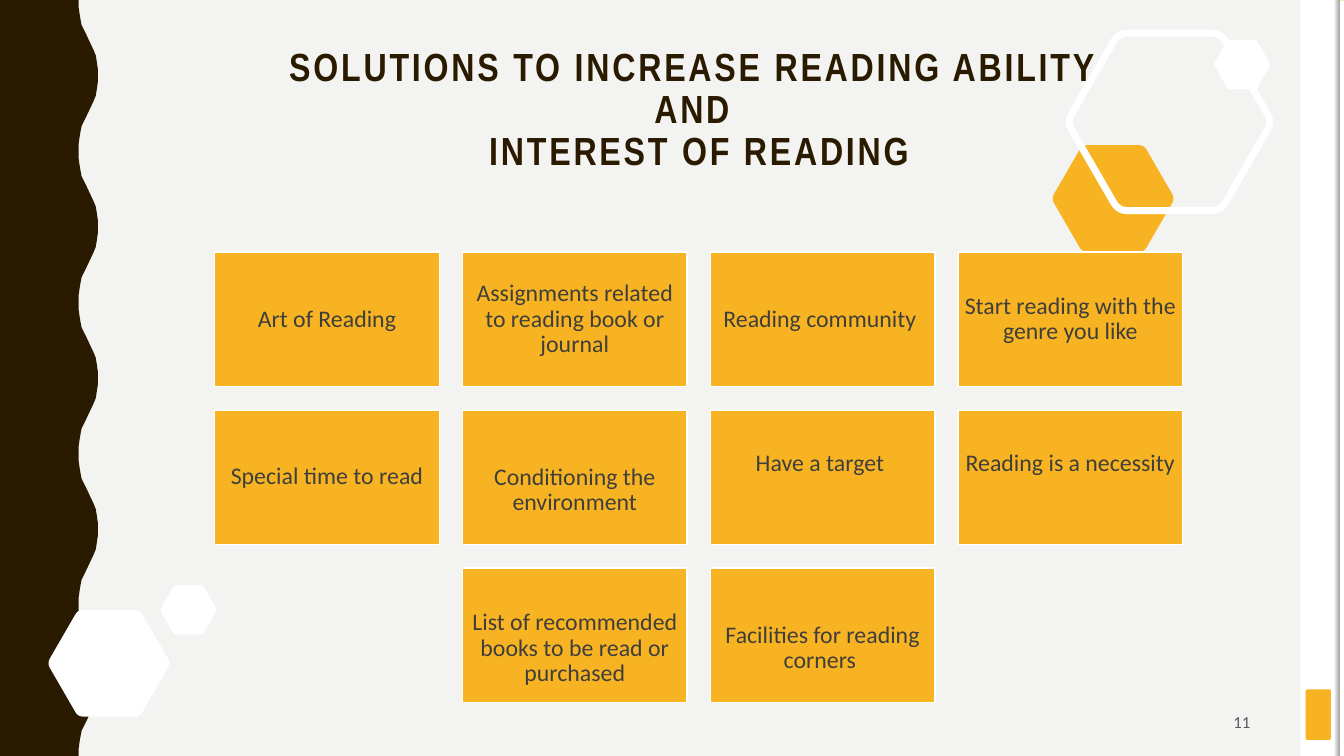
from math import cos, radians, sin, sqrt

from pptx import Presentation
from pptx.dml.color import RGBColor
from pptx.enum.shapes import MSO_SHAPE as Preset
from pptx.enum.text import MSO_ANCHOR as Anchor, PP_ALIGN as Align
from pptx.util import Inches, Pt

COLORS = {
    "background": "F3F3F2", "brown": "2A1A00", "yellow": "F8B323", "white": "FFFFFF",
    "box_text": "3F3F3A", "number": "595959", "shade_light": "F2F2F2", "shade_dark": "A6A6A6",
}
WIDTH, HEIGHT = 13.33, 7.5

# Half of one wave as (y, x); the other half mirrors it
WAVE_PERIOD = 1.5
HALF_WAVE = [(0, 0.78), (0.07, 0.78), (0.14, 0.79), (0.2, 0.8), (0.25, 0.81), (0.33, 0.85),
             (0.5, 0.93), (0.55, 0.95), (0.61, 0.96), (0.68, 0.97), (0.75, 0.97)]

# Each box: text and the vertical offset of its text in lines
SOLUTIONS = [
    [("Art of Reading", 0), ("Assignments related to reading book or journal", 0),
     ("Reading community ", 0), ("Start reading with the genre you like", 0)],
    [("Special time to read", 0), ("Conditioning the environment", 1),
     ("Have a target ", -1), ("Reading is a necessity", -1)],
    [("List of recommended books to be read or purchased", 1),
     ("Facilities for reading corners ", 1)],
]


def rgb(name):
    return RGBColor.from_string(COLORS[name])


def paint(shape, fill=None, line=None, line_width=1):
    shape.shadow.inherit = False
    if fill:
        shape.fill.solid()
        shape.fill.fore_color.rgb = rgb(fill)
    else:
        shape.fill.background()
    if line:
        shape.line.color.rgb = rgb(line)
        shape.line.width = Pt(line_width)
    else:
        shape.line.fill.background()


def add_block(slide, box, fill, line=None, preset=Preset.RECTANGLE):
    shape = slide.shapes.add_shape(preset, *map(Inches, box))
    paint(shape, fill, line)
    return shape


def add_outline(slide, points, **style):
    (start_x, start_y), *others = [(Inches(x), Inches(y)) for x, y in points]
    builder = slide.shapes.build_freeform(start_x, start_y)
    builder.add_line_segments(others, close=True)
    paint(builder.convert_to_shape(), **style)


def write(shape, text, font, size, color, align, anchor, spacing=1.0, bold=False):
    frame = shape.text_frame
    frame.word_wrap = True
    frame.vertical_anchor = anchor
    frame.text = text
    paragraph = frame.paragraphs[0]
    paragraph.alignment = align
    paragraph.line_spacing = spacing
    for run in paragraph.runs:
        run.font.name = font
        run.font.size = Pt(size)
        run.font.bold = bold
        run.font.color.rgb = rgb(color)
    return paragraph


def add_wave(slide, height):
    points = [(0, 0)]
    wave = HALF_WAVE + [(WAVE_PERIOD - y, x) for y, x in HALF_WAVE[-2:0:-1]]
    for index in range(round(height / WAVE_PERIOD)):
        points += [(x, y + index * WAVE_PERIOD) for y, x in wave]
    points += [(HALF_WAVE[0][1], height), (0, height)]
    add_outline(slide, points, fill="brown")


def add_hexagon(slide, center_x, center_y, height, **style):
    """Regular hexagon whose corners are rounded with quadratic curves."""
    side = height / sqrt(3)
    corners = [(center_x + side * cos(radians(angle)), center_y + side * sin(radians(angle)))
               for angle in range(0, 360, 60)]
    cut, steps = 0.09, 6
    points = []
    for index, corner in enumerate(corners):
        before, after = corners[index - 1], corners[(index + 1) % 6]
        for step in range(steps + 1):
            t = step / steps
            back, ahead = cut * (1 - t) ** 2, cut * t ** 2
            points.append(tuple(c + back * (b - c) + ahead * (a - c)
                                for b, c, a in zip(before, corner, after)))
    add_outline(slide, points, **style)


def add_right_edge(slide, height):
    add_block(slide, (13.02, 0, 0.31, height), "yellow")
    add_block(slide, (12.9, 0, 0.39, height), "white")
    tab = add_block(slide, (12.95, 6.84, 0.25, 0.5), "yellow", preset=Preset.ROUNDED_RECTANGLE)
    tab.adjustments[0] = 0.07
    # Thin upright strips, the second one shaded
    for left in (9.56, 9.51):
        strip = add_block(slide, (left, 3.73, height, 0.05), "white")
        strip.rotation = 90
    strip.fill.gradient()
    strip.fill.gradient_angle = 90
    for stop, name in zip(strip.fill.gradient_stops, ("shade_light", "shade_dark")):
        stop.color.rgb = rgb(name)


def add_hexagons(slide):
    add_hexagon(slide, 1.08, 6.58, 1.06, fill="white")
    add_hexagon(slide, 11.04, 1.97, 1.06, fill="yellow")
    add_hexagon(slide, 11.6, 1.21, 1.76, line="white", line_width=5)
    add_hexagon(slide, 1.87, 6.05, 0.49, fill="white")
    add_hexagon(slide, 12.32, 0.64, 0.49, fill="white")


def add_title(slide, box):
    title = slide.shapes.add_textbox(*map(Inches, box))
    paragraph = write(title, "SOLUTIONS TO INCREASE READING ABILITY \vAND \vINTEREST OF READING",
                      "Arial Narrow", 28, "brown", Align.CENTER, Anchor.TOP, 0.9, bold=True)
    for run in paragraph.runs:
        run.font._element.set("spc", "200")


def add_solutions(slide, box):
    left, top, width, height = box
    gap, margin, line_height = 0.23, 0.07, 0.26
    columns, rows = max(map(len, SOLUTIONS)), len(SOLUTIONS)
    box_width = (width - gap * (columns - 1)) / columns
    box_height = (height - gap * (rows - 1)) / rows
    for row, entries in enumerate(SOLUTIONS):
        first_column = (columns - len(entries)) / 2
        for column, (text, offset) in enumerate(entries, 0):
            x = left + (first_column + column) * (box_width + gap)
            y = top + row * (box_height + gap)
            shape = add_block(slide, (x, y, box_width, box_height), "yellow", "white")
            frame = shape.text_frame
            frame.margin_left = frame.margin_right = Inches(0.06)
            frame.margin_top = Inches(margin + max(offset, 0) * line_height)
            frame.margin_bottom = Inches(margin + max(-offset, 0) * line_height)
            write(shape, text, "Calibri", 17, "box_text", Align.CENTER, Anchor.MIDDLE, 0.9)


def add_slide_number(slide, box):
    number = slide.shapes.add_textbox(*map(Inches, box))
    write(number, "11", "Calibri", 12, "number", Align.RIGHT, Anchor.MIDDLE)


def main():
    presentation = Presentation()
    presentation.slide_width, presentation.slide_height = Inches(WIDTH), Inches(HEIGHT)
    slide = presentation.slides.add_slide(presentation.slide_layouts[6])
    slide.background.fill.solid()
    slide.background.fill.fore_color.rgb = rgb("background")

    # Decoration
    add_wave(slide, HEIGHT)
    add_right_edge(slide, HEIGHT)
    add_hexagons(slide)

    # Content
    add_title(slide, (1.37, 0.42, 11.13, 1.63))
    add_solutions(slide, (2.13, 2.5, 9.6, 4.47))
    add_slide_number(slide, (9.42, 6.97, 3.08, 0.38))

    presentation.save("out.pptx")


if __name__ == "__main__":
    main()
